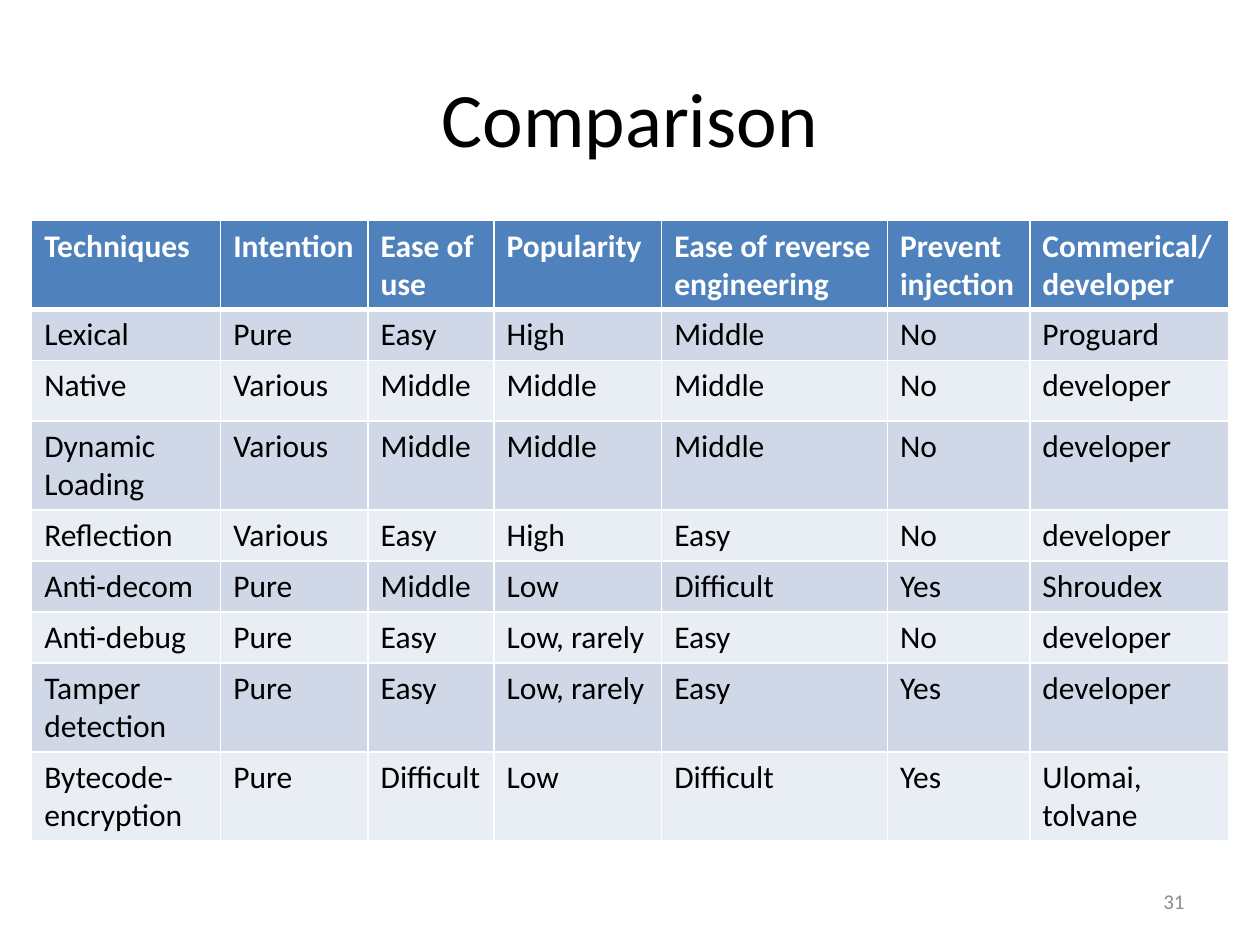
from lxml import etree
from pptx import Presentation
from pptx.dml import color
from pptx.enum import text
from pptx.oxml import ns
from pptx.util import Cm, Pt

FONT = "Calibri"
WHITE, BLACK, GREY = "FFFFFF", "000000", "8C8C8C"
HEADER, BANDS = "4F81BD", ("E9EDF4", "D0D8E8")

COLUMN_WIDTHS = (3.81, 2.97, 2.54, 3.38, 4.55, 2.87, 4.01)
ROW_HEIGHTS = (1.79, 1.03, 1.22, 1.79, 1.03, 1.03, 1.03, 1.79, 1.79)
COMPARISON = (
    ("Techniques", "Intention", "Ease of use", "Popularity",
     "Ease of reverse engineering", "Prevent injection", "Commerical/developer"),
    ("Lexical", "Pure", "Easy", "High", "Middle", "No", "Proguard"),
    ("Native", "Various", "Middle", "Middle", "Middle", "No", "developer"),
    ("Dynamic Loading", "Various", "Middle", "Middle", "Middle", "No", "developer"),
    ("Reflection", "Various", "Easy", "High", "Easy", "No", "developer"),
    ("Anti-decom", "Pure", "Middle", "Low", "Difficult", "Yes", "Shroudex"),
    ("Anti-debug", "Pure", "Easy", "Low, rarely", "Easy", "No", "developer"),
    ("Tamper detection", "Pure", "Easy", "Low, rarely", "Easy", "Yes", "developer"),
    ("Bytecode-encryption", "Pure", "Difficult", "Low", "Difficult", "Yes",
     "Ulomai, tolvane"),
)


def rgb(value):
    return color.RGBColor.from_string(value)


def style_runs(paragraph, size, ink, bold=False):
    for run in paragraph.runs:
        run.font.name = FONT
        run.font.size = Pt(size)
        run.font.bold = bold
        run.font.color.rgb = rgb(ink)


def add_line(slide, box, words, size, ink, align):
    frame = slide.shapes.add_textbox(*map(Cm, box)).text_frame
    frame.word_wrap = True
    frame.vertical_anchor = text.MSO_ANCHOR.MIDDLE
    frame.text = words
    frame.paragraphs[0].alignment = align
    style_runs(frame.paragraphs[0], size, ink)


def set_borders(cell, bottom_width):
    properties = cell._tc.get_or_add_tcPr()
    widths = {"a:lnL": 1, "a:lnR": 1, "a:lnT": 1, "a:lnB": bottom_width}
    for position, (side, width) in enumerate(widths.items()):
        border = etree.Element(ns.qn(side), w=str(Pt(width)))
        fill = etree.SubElement(border, ns.qn("a:solidFill"))
        etree.SubElement(fill, ns.qn("a:srgbClr"), val=WHITE)
        properties.insert(position, border)


def add_comparison(slide, box):
    table = slide.shapes.add_table(
        len(COMPARISON), len(COLUMN_WIDTHS), *map(Cm, box)).table
    for column, width in zip(table.columns, COLUMN_WIDTHS):
        column.width = Cm(width)
    for r, (height, entries) in enumerate(zip(ROW_HEIGHTS, COMPARISON)):
        table.rows[r].height = Cm(height)
        heading = r == 0
        for c, entry in enumerate(entries):
            cell = table.cell(r, c)
            cell.fill.solid()
            cell.fill.fore_color.rgb = rgb(HEADER if heading else BANDS[r % 2])
            set_borders(cell, 3 if heading else 1)
            cell.text_frame.text = entry
            style_runs(cell.text_frame.paragraphs[0], 18,
                       WHITE if heading else BLACK, heading)


def main():
    deck = Presentation()
    deck.slide_width, deck.slide_height = Cm(25.4), Cm(19.05)
    slide = deck.slides.add_slide(deck.slide_layouts[6])
    add_line(slide, (1.27, 0.76, 22.86, 3.18), "Comparison", 44, BLACK,
             text.PP_ALIGN.CENTER)
    add_line(slide, (18.2, 17.66, 5.93, 1.01), "31", 12, GREY,
             text.PP_ALIGN.RIGHT)
    add_comparison(slide, (0.64, 4.45, sum(COLUMN_WIDTHS), sum(ROW_HEIGHTS)))
    deck.save("out.pptx")


if __name__ == "__main__":
    main()
